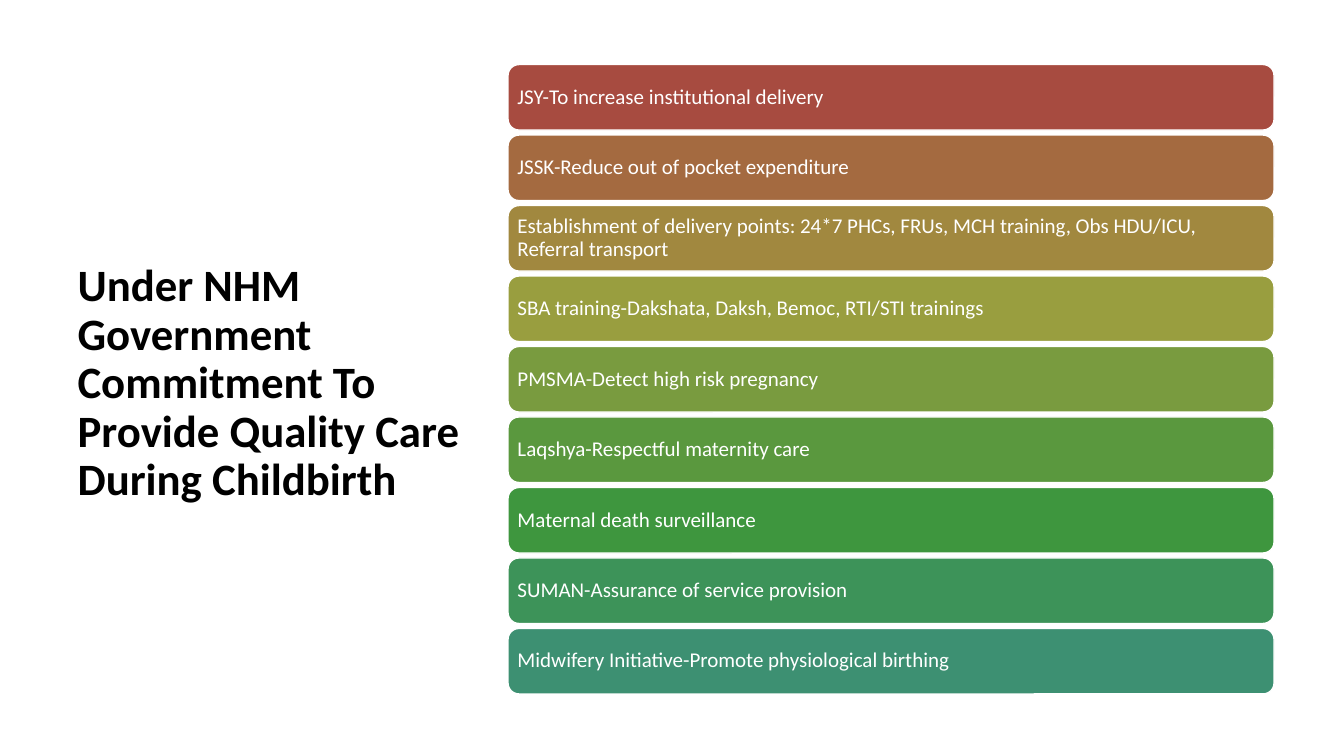
import pptx
import pptx.util
import pptx.dml.color
import pptx.enum.shapes
import pptx.enum.text

Pt = pptx.util.Pt
RGB = pptx.dml.color.RGBColor
ALIGN = pptx.enum.text.PP_ALIGN
ANCHOR = pptx.enum.text.MSO_ANCHOR

BLACK = RGB(0x00, 0x00, 0x00)
WHITE = RGB(0xFF, 0xFF, 0xFF)
BARS = [
    ("JSY-To increase institutional delivery", RGB(0xA7, 0x4B, 0x40)),
    ("JSSK-Reduce out of pocket expenditure", RGB(0xA4, 0x6A, 0x40)),
    ("Establishment of delivery points: 24*7 PHCs, FRUs, MCH training, "
     "Obs HDU/ICU, Referral transport", RGB(0xA1, 0x88, 0x3F)),
    ("SBA training-Dakshata, Daksh, Bemoc, RTI/STI trainings", RGB(0x99, 0x9E, 0x3F)),
    ("PMSMA-Detect high risk pregnancy", RGB(0x79, 0x9B, 0x3F)),
    ("Laqshya-Respectful maternity care", RGB(0x5A, 0x98, 0x3E)),
    ("Maternal death surveillance", RGB(0x3E, 0x96, 0x3E)),
    ("SUMAN-Assurance of service provision", RGB(0x3D, 0x93, 0x59)),
    ("Midwifery Initiative-Promote physiological birthing", RGB(0x3D, 0x90, 0x72)),
]
LEFT, TOP, WIDTH, HEIGHT, STEP = 362.9, 46.1, 547.2, 46.8, 50.35
INSET = 4.5


def style(frame, text, size, color, bold, anchor):
    frame.text = text
    frame.word_wrap = True
    frame.auto_size = pptx.enum.text.MSO_AUTO_SIZE.NONE
    frame.vertical_anchor = anchor
    para = frame.paragraphs[0]
    para.alignment = ALIGN.LEFT
    para.line_spacing = 0.9
    font = para.runs[0].font
    font.name = "Calibri"
    font.size = Pt(size)
    font.bold = bold
    font.color.rgb = color


deck = pptx.Presentation()
deck.slide_width = Pt(960)
deck.slide_height = Pt(540)
slide = deck.slides.add_slide(deck.slide_layouts[5])

title = slide.shapes.title
title.left, title.top = Pt(48.2), Pt(184.3)
title.width, title.height = Pt(288.7), Pt(314.6)
style(title.text_frame,
      "Under NHM Government Commitment To Provide Quality Care During Childbirth",
      32, BLACK, True, ANCHOR.TOP)

for row, (text, color) in enumerate(BARS):
    bar = slide.shapes.add_shape(
        pptx.enum.shapes.MSO_SHAPE.ROUNDED_RECTANGLE,
        Pt(LEFT), Pt(TOP + row * STEP), Pt(WIDTH), Pt(HEIGHT))
    bar.shadow.inherit = False
    bar.fill.solid()
    bar.fill.fore_color.rgb = color
    bar.line.color.rgb = WHITE
    bar.line.width = Pt(1)
    frame = bar.text_frame
    frame.margin_left = frame.margin_right = Pt(INSET)
    frame.margin_top = frame.margin_bottom = Pt(INSET)
    style(frame, text, 15, WHITE, False, ANCHOR.MIDDLE)

deck.save("out.pptx")
